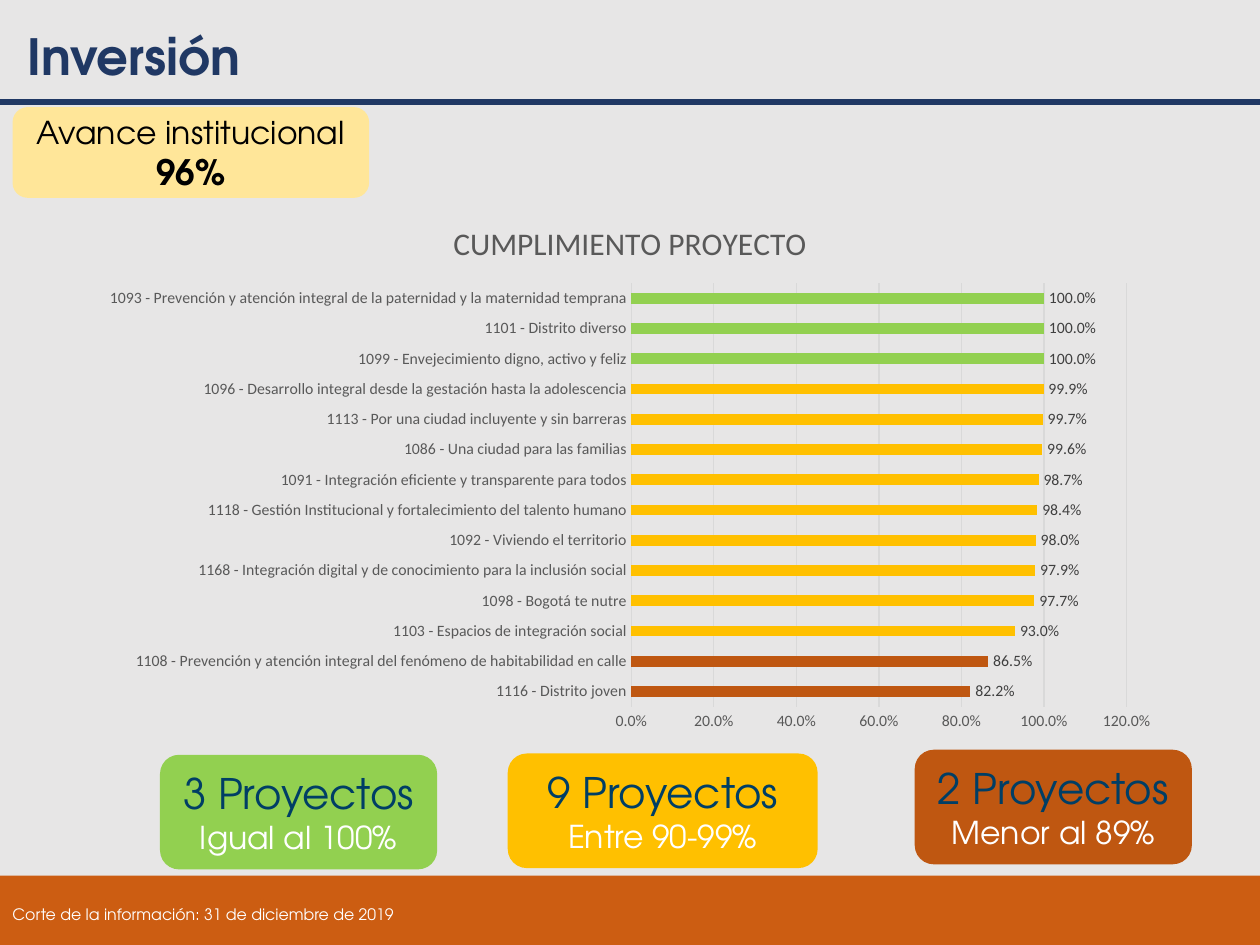
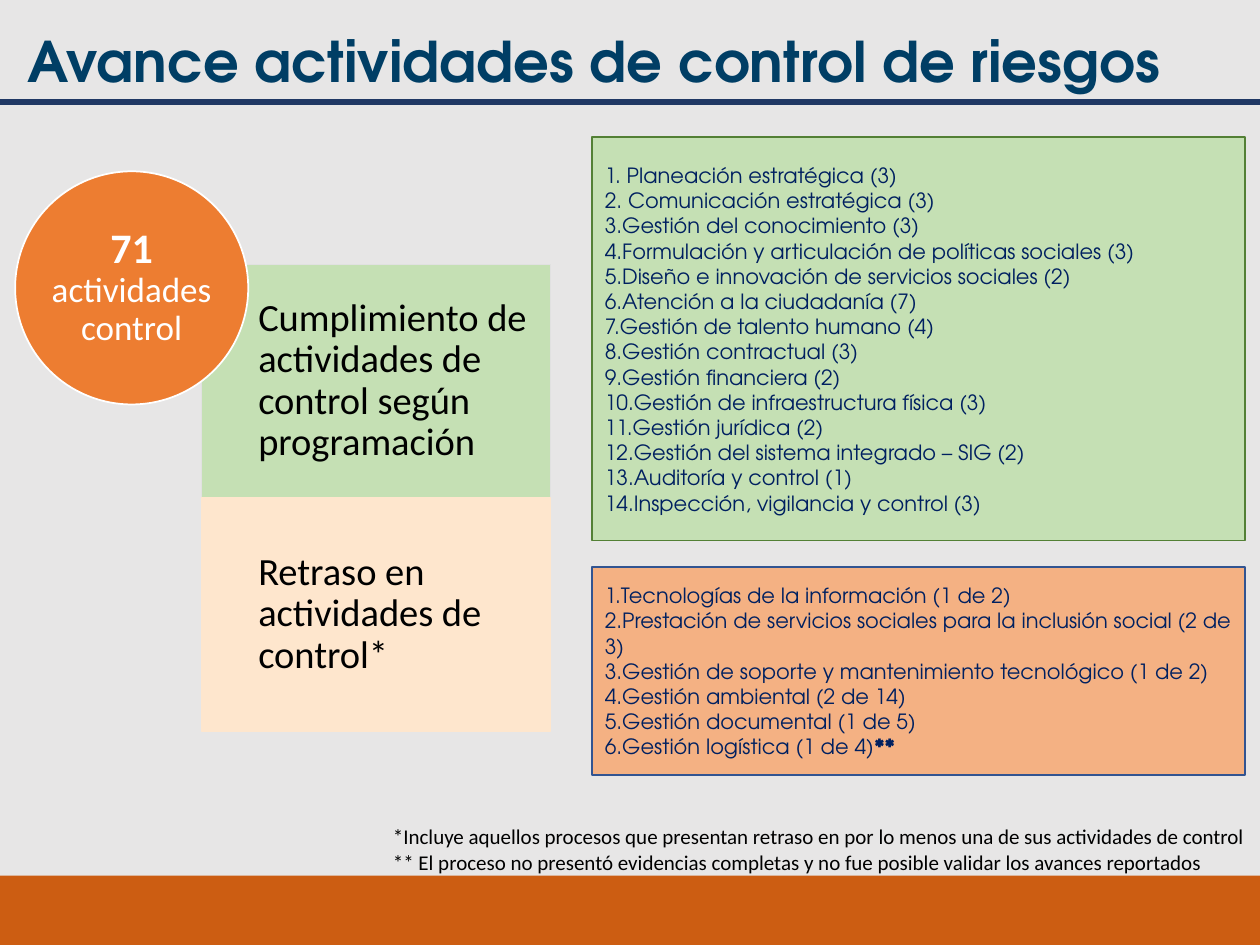
from dataclasses import dataclass

from lxml.etree import SubElement
from pptx import Presentation
from pptx.chart.data import CategoryChartData
from pptx.dml.color import RGBColor
from pptx.enum.chart import XL_CHART_TYPE as ChartType, XL_LABEL_POSITION as LabelPosition, XL_TICK_MARK as Tick
from pptx.enum.shapes import MSO_CONNECTOR as Connector, MSO_SHAPE as Preset
from pptx.enum.text import MSO_ANCHOR as Anchor, MSO_AUTO_SIZE as AutoSize, PP_ALIGN as Align
from pptx.oxml.ns import qn
from pptx.util import Inches, Pt

BACKGROUND = RGBColor(0xE7, 0xE6, 0xE6)
NAVY = RGBColor(0x20, 0x38, 0x64)
PETROL = RGBColor(0x00, 0x3E, 0x65)
LIST_BLUE = RGBColor(0x00, 0x20, 0x60)
FOOTER_ORANGE = RGBColor(0xCC, 0x5D, 0x12)
GREEN = RGBColor(0x92, 0xD0, 0x50)
AMBER = RGBColor(0xFF, 0xC0, 0x00)
RUST = RGBColor(0xBF, 0x57, 0x11)
CREAM = RGBColor(0xFF, 0xE6, 0x99)
PALE_GREEN = RGBColor(0xC5, 0xE0, 0xB4)
DARK_GREEN = RGBColor(0x53, 0x80, 0x35)
PEACH = RGBColor(0xFE, 0xE6, 0xCD)
SALMON = RGBColor(0xF4, 0xB1, 0x83)
BLUE = RGBColor(0x32, 0x54, 0x91)
ORANGE = RGBColor(0xED, 0x7D, 0x31)
EDGE_GRAY = RGBColor(0xE1, 0xE1, 0xE1)
GRID_GRAY = RGBColor(0xD9, 0xD9, 0xD9)
AXIS_GRAY = RGBColor(0x59, 0x59, 0x59)
LABEL_GRAY = RGBColor(0x40, 0x40, 0x40)
WHITE = RGBColor(0xFF, 0xFF, 0xFF)
BLACK = RGBColor(0, 0, 0)

ADVENTOR = "TeX Gyre Adventor"
CALIBRI = "Calibri"
COLUMNS, ROWS = 100, 75
CELL = Inches(0.1)

PROJECTS = [
    ("1116 - Distrito joven", 0.822),
    ("1108 - Prevención y atención integral del fenómeno de habitabilidad en calle", 0.865),
    ("1103 - Espacios de integración social", 0.93),
    ("1098 - Bogotá te nutre", 0.977),
    ("1168 - Integración digital y de conocimiento para la inclusión social", 0.979),
    ("1092 - Viviendo el territorio", 0.98),
    ("1118 - Gestión Institucional y fortalecimiento del talento humano", 0.984),
    ("1091 - Integración eficiente y transparente para todos", 0.987),
    ("1086 - Una ciudad para las familias", 0.996),
    ("1113 - Por una ciudad incluyente y sin barreras", 0.997),
    ("1096 - Desarrollo integral desde la gestación hasta la adolescencia", 0.999),
    ("1099 - Envejecimiento digno, activo y feliz", 1),
    ("1101 - Distrito diverso", 1),
    ("1093 - Prevención y atención integral de la paternidad y la maternidad temprana", 1),
]
ON_SCHEDULE = [
    " Planeación estratégica (3)",
    " Comunicación estratégica (3)",
    "Gestión del conocimiento (3)",
    "Formulación y articulación de políticas sociales (3)",
    "Diseño e innovación de servicios sociales (2)",
    "Atención a la ciudadanía (7)",
    "Gestión de talento humano (4)",
    "Gestión contractual (3)",
    "Gestión financiera (2)",
    "Gestión de infraestructura física (3)",
    "Gestión jurídica (2)",
    "Gestión del sistema integrado – SIG (2)",
    "Auditoría y control (1)",
    "Inspección, vigilancia y control (3)",
]
DELAYED = [
    "Tecnologías de la información (1 de 2)",
    "Prestación de servicios sociales para la inclusión social (2 de 3)",
    "Gestión de soporte y mantenimiento tecnológico (1 de 2)",
    "Gestión ambiental (2 de 14)",
    "Gestión documental (1 de 5)",
    "Gestión logística (1 de 4)",
]
FOOTNOTES = [
    "*Incluye aquellos procesos que presentan retraso en por lo menos una de sus actividades de control",
    "** El proceso no presentó evidencias completas y no fue posible validar los avances reportados",
]


@dataclass
class Box:
    left: float
    top: float
    width: float
    height: float

    def inside(self, left, top, width, height):
        return Box(self.left + left, self.top + top, width, height)

    def emu(self):
        return [round(cells * CELL) for cells in (self.left, self.top, self.width, self.height)]


PAGE = Box(0, 0, COLUMNS, ROWS)


def style(font, size, color, face=ADVENTOR, bold=False):
    font.size, font.name, font.bold = Pt(size), face, bold
    font.color.rgb = color


def add_panel(slide, preset, box, fill, edge=None):
    panel = slide.shapes.add_shape(preset, *box.emu())
    panel.shadow.inherit = False
    paint(panel, fill, edge)
    panel.text_frame.vertical_anchor = Anchor.MIDDLE
    return panel


def paint(panel, fill, edge):
    panel.fill.solid()
    panel.fill.fore_color.rgb = fill
    if edge is None:
        panel.line.fill.background()
    else:
        panel.line.color.rgb = edge
        panel.line.width = Pt(1)


def place(placeholder, box):
    placeholder.left, placeholder.top, placeholder.width, placeholder.height = box.emu()
    frame = placeholder.text_frame
    frame.auto_size = AutoSize.NONE
    frame.vertical_anchor = Anchor.MIDDLE
    return frame


def add_paragraphs(frame, texts):
    frame.text = "\n".join(texts)
    return frame.paragraphs


def add_runs(paragraph, *runs):
    for text, size, color, face, bold in runs:
        run = paragraph.add_run()
        run.text = text
        style(run.font, size, color, face, bold)


def add_note(slide, box, texts):
    frame = slide.shapes.add_textbox(*box.emu()).text_frame
    frame.word_wrap = True
    return add_paragraphs(frame, texts)


def build_master(master, slide):
    master.background.fill.solid()
    master.background.fill.fore_color.rgb = BACKGROUND
    footer = add_panel(slide, Preset.RECTANGLE, PAGE.inside(0, 69.5, COLUMNS, 5.5), FOOTER_ORANGE)
    left, top, width, _ = PAGE.inside(0, 8.1, COLUMNS, 0).emu()
    rule = slide.shapes.add_connector(Connector.STRAIGHT, left, top, left + width, top)
    rule.line.color.rgb = NAVY
    rule.line.width = Pt(3)
    SubElement(rule.element.spPr, qn("a:effectLst"))
    for position, part in enumerate((footer, rule), 2):
        master.shapes.element.insert(position, part.element)


def set_title(slide, box, text, size, color):
    paragraph, = add_paragraphs(place(slide.shapes.title, box), [text])
    paragraph.alignment = Align.LEFT
    style(paragraph.font, size, color, bold=True)


def add_progress(slide, box):
    badge = add_panel(slide, Preset.ROUNDED_RECTANGLE, box, CREAM)
    paragraph = badge.text_frame.paragraphs[0]
    paragraph.alignment = Align.CENTER
    add_runs(paragraph, ("Avance institucional ", 18, BLACK, ADVENTOR, False),
             ("96%", 20, BLACK, ADVENTOR, True))


def add_count_cards(slide, box):
    cards = [
        (0, 0.4, 22, GREEN, "3 Proyectos", "Igual al 100%"),
        (27.6, 0.3, 24.6, AMBER, "9 Proyectos", "Entre 90-99%"),
        (59.9, 0, 22, RUST, "2 Proyectos", "Menor al 89%"),
    ]
    for left, top, width, fill, count, bracket in cards:
        card = add_panel(slide, Preset.ROUNDED_RECTANGLE, box.inside(left, top, width, 9.1), fill)
        paragraphs = add_paragraphs(card.text_frame, [count, bracket])
        for paragraph, size, color in zip(paragraphs, (24, 18), (PETROL, WHITE)):
            paragraph.alignment = Align.CENTER
            style(paragraph.font, size, color)


def level_color(share):
    return GREEN if share >= 1 else AMBER if share >= 0.9 else RUST


def add_compliance_chart(slide, box):
    heading = "CUMPLIMIENTO PROYECTO"
    names, shares = zip(*PROJECTS)
    data = CategoryChartData(number_format="0.0%")
    data.categories = names
    data.add_series(heading, shares)
    chart = slide.shapes.add_chart(ChartType.BAR_CLUSTERED, *box.emu(), data).chart
    style(chart.font, 10, BLACK, CALIBRI)
    chart.has_legend = False
    title, = add_paragraphs(chart.chart_title.text_frame, [heading])
    style(title.font, 18, AXIS_GRAY, CALIBRI)

    for axis in (chart.category_axis, chart.value_axis):
        axis.major_tick_mark = axis.minor_tick_mark = Tick.NONE
        style(axis.tick_labels.font, 9, AXIS_GRAY, CALIBRI)
    chart.category_axis.has_major_gridlines = False
    value_axis = chart.value_axis
    value_axis.minimum_scale, value_axis.maximum_scale, value_axis.major_unit = 0, 1.2, 0.2
    value_axis.tick_labels.number_format = "0.0%"
    value_axis.tick_labels.number_format_is_linked = False
    value_axis.format.line.fill.background()
    for line in (chart.category_axis.format.line, value_axis.major_gridlines.format.line):
        line.color.rgb = GRID_GRAY
        line.width = Pt(0.75)

    plot = chart.plots[0]
    plot.gap_width = 182
    plot.vary_by_categories = False
    plot.has_data_labels = True
    labels = plot.data_labels
    labels.show_value = True
    labels.position = LabelPosition.OUTSIDE_END
    labels.number_format = "0.0%"
    labels.number_format_is_linked = False
    style(labels.font, 9, LABEL_GRAY, CALIBRI)
    for index, share in enumerate(shares):
        bar = plot.series[0].points[index].format.fill
        bar.solid()
        bar.fore_color.rgb = level_color(share)


def add_control_summary(slide, box):
    bands = [
        ("Cumplimiento de actividades de control según programación", PALE_GREEN, EDGE_GRAY),
        ("Retraso en actividades de control*", PEACH, PEACH),
    ]
    side = 18.5
    for row, (text, fill, edge) in enumerate(bands):
        band = add_panel(slide, Preset.RECTANGLE, box.inside(14.8, 7.4 + row * side, 27.7, side), fill, edge)
        frame = band.text_frame
        frame.margin_left = Inches(0.45)
        frame.margin_top = frame.margin_right = frame.margin_bottom = Inches(0.17)
        paragraph, = add_paragraphs(frame, [text])
        paragraph.alignment = Align.LEFT
        paragraph.line_spacing = 0.9
        style(paragraph.font, 22, BLACK, CALIBRI)

    total = add_panel(slide, Preset.OVAL, box.inside(0, 0, side, side), ORANGE, WHITE)
    frame = total.text_frame
    frame.margin_left = frame.margin_top = frame.margin_right = frame.margin_bottom = 0
    paragraph = frame.paragraphs[0]
    paragraph.alignment = Align.CENTER
    paragraph.line_spacing = 0.9
    add_runs(paragraph, ("71 ", 24, WHITE, CALIBRI, True),
             ("actividades control", 20, WHITE, CALIBRI, False))


def fill_process_list(placeholder, box, processes, fill, edge):
    frame = place(placeholder, box)
    paint(placeholder, fill, edge)
    paragraphs = add_paragraphs(frame, processes)
    for paragraph in paragraphs:
        paragraph.space_before = Pt(0)
        style(paragraph.font, 12, LIST_BLUE)
        properties = paragraph._p.get_or_add_pPr()
        properties.set("marL", "0")
        properties.set("indent", "0")
        numbering = properties.makeelement(qn("a:buAutoNum"), {"type": "arabicPeriod"})
        properties.find(qn("a:defRPr")).addprevious(numbering)
    return paragraphs


def build_investment(slide):
    set_title(slide, PAGE.inside(1.2, 1.9, 64.7, 5.1), "Inversión", 28.5, NAVY)
    add_count_cards(slide, PAGE.inside(12.7, 59.5, 81.9, 9.5))
    cutoff, = add_note(slide, PAGE.inside(0, 71.2, 98.9, 2.5),
                       ["Corte de la información: 31 de diciembre de 2019"])
    cutoff.alignment = Align.JUSTIFY
    cutoff.line_spacing = 1.07
    style(cutoff.font, 9, WHITE)
    add_progress(slide, PAGE.inside(1, 8.5, 28.3, 7.2))
    add_compliance_chart(slide, PAGE.inside(7, 15.7, 86, 43.1))


def build_risk_control(slide):
    set_title(slide, PAGE.inside(1.2, 2.2, 97.6, 5.1), "Avance actividades de control de riesgos", 32, PETROL)
    add_control_summary(slide, PAGE.inside(1.2, 13.6, 42.5, 44.4))
    _, on_schedule, delayed = slide.placeholders
    fill_process_list(on_schedule, PAGE.inside(47, 10.9, 51.8, 32), ON_SCHEDULE, PALE_GREEN, DARK_GREEN)
    late = fill_process_list(delayed, PAGE.inside(47, 45, 51.8, 16.5), DELAYED, SALMON, BLUE)
    add_runs(late[-1], ("**", 12, LIST_BLUE, ADVENTOR, True))
    for footnote in add_note(slide, PAGE.inside(30.2, 64.9, 70.4, 5), FOOTNOTES):
        style(footnote.font, 12, BLACK, CALIBRI)


def main():
    deck = Presentation()
    deck.slide_width, deck.slide_height = COLUMNS * CELL, ROWS * CELL
    title_only, two_content = deck.slide_layouts[5], deck.slide_layouts[3]
    investment = deck.slides.add_slide(title_only)
    build_master(deck.slide_master, investment)
    build_investment(investment)
    build_risk_control(deck.slides.add_slide(two_content))
    deck.save("out.pptx")


if __name__ == "__main__":
    main()
